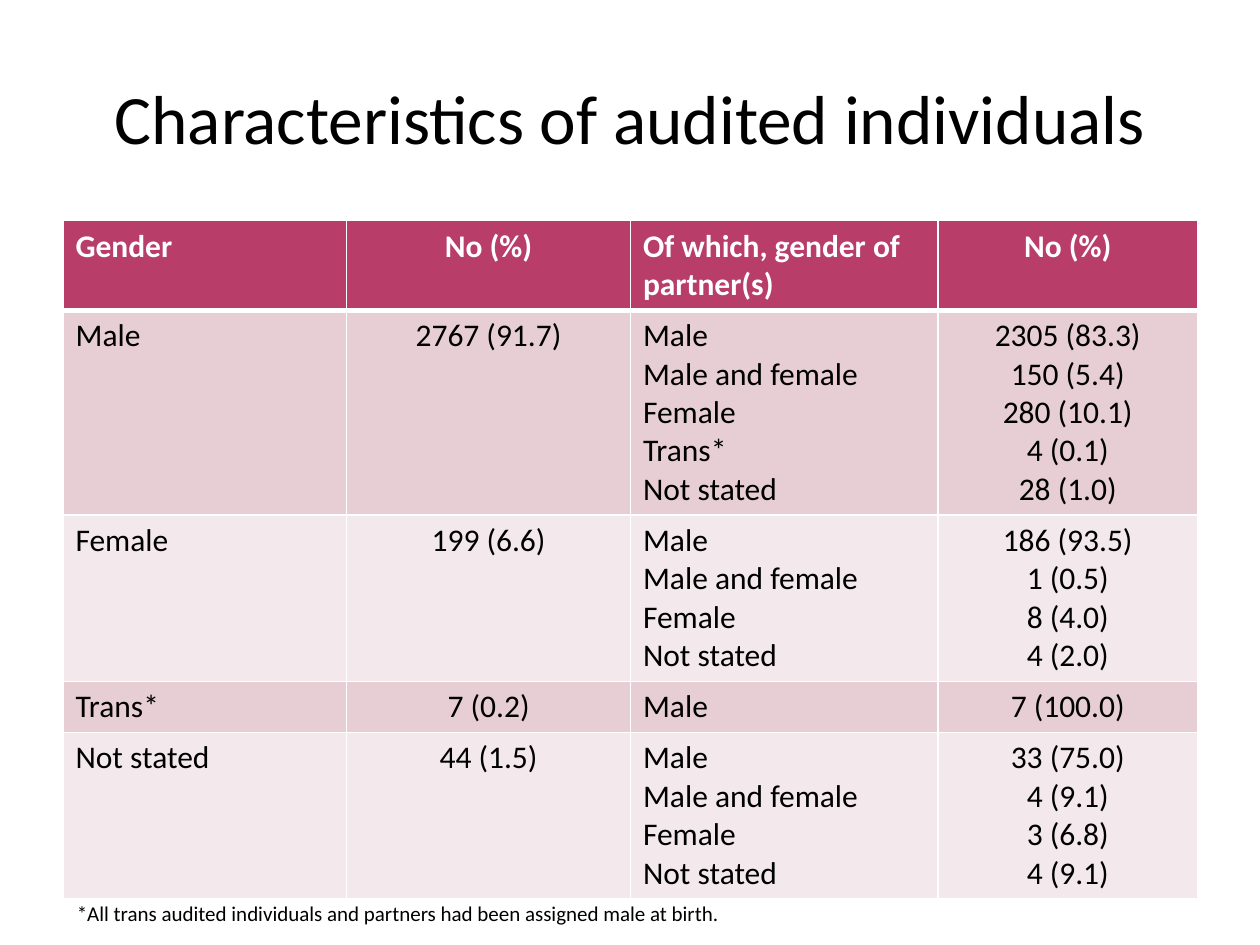
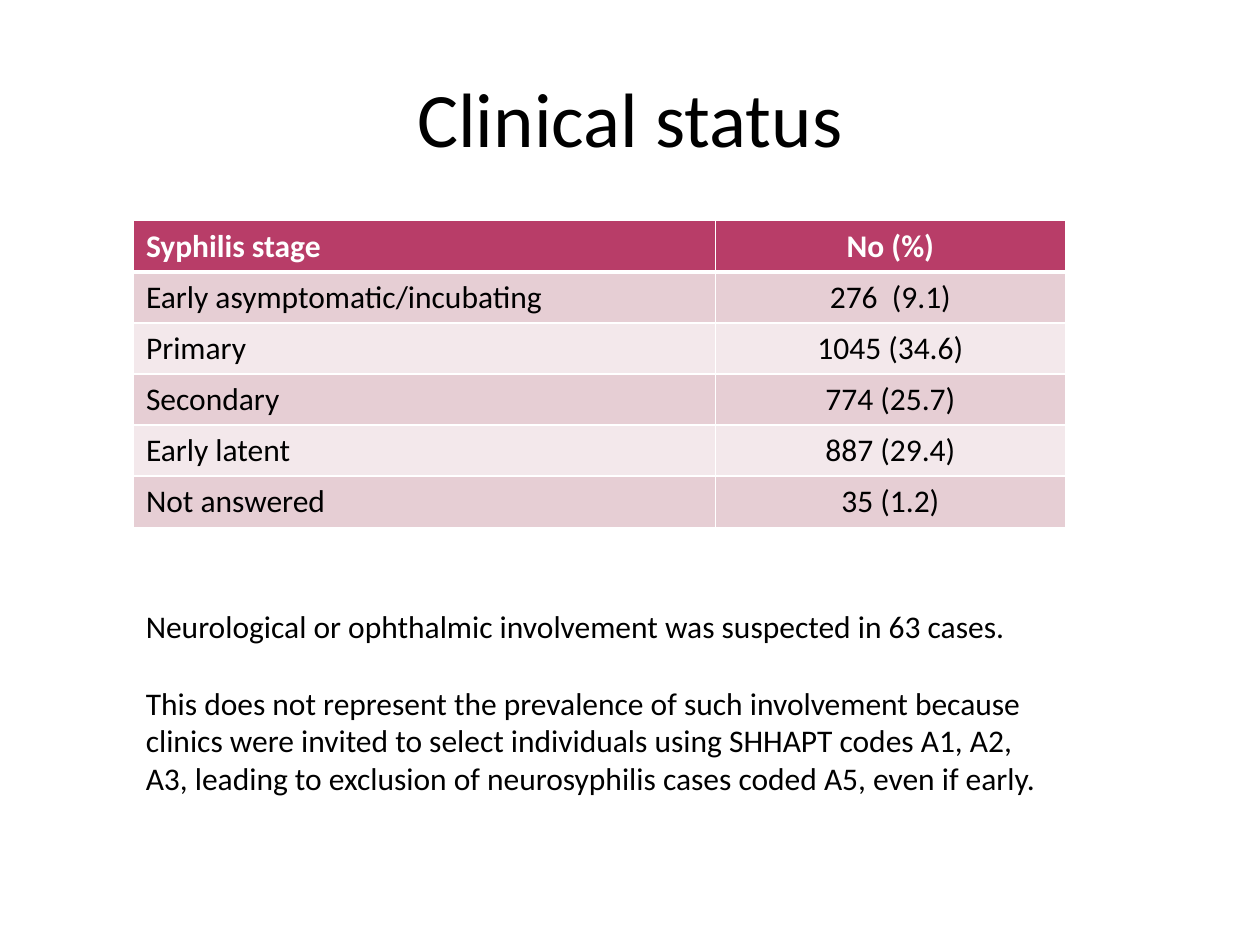
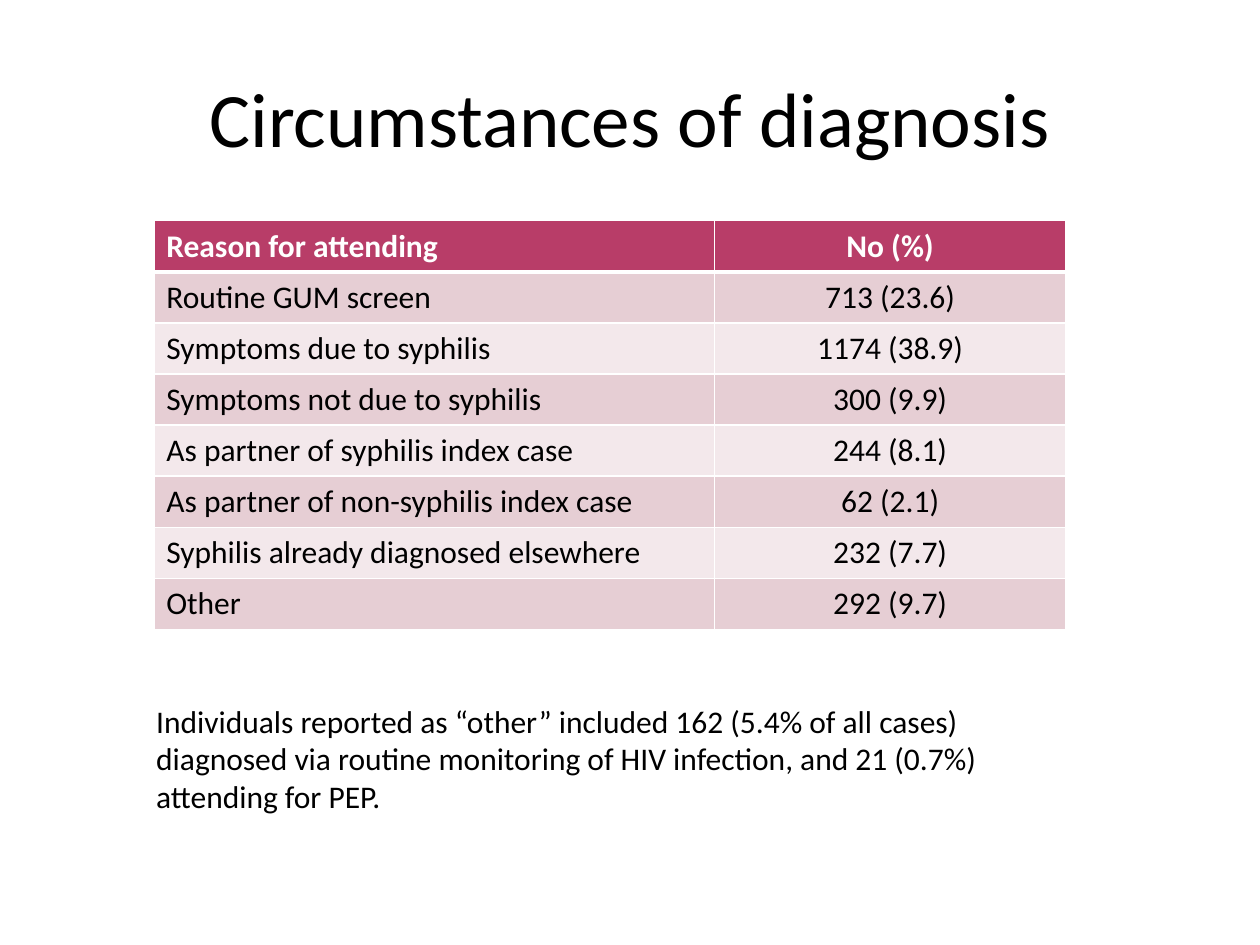
import pptx
import pptx.dml.color
import pptx.enum.text
import pptx.oxml
import pptx.oxml.ns
import pptx.util

Cm = pptx.util.Cm
RGBColor = pptx.dml.color.RGBColor
Align = pptx.enum.text.PP_ALIGN
AutoSize = pptx.enum.text.MSO_AUTO_SIZE

# Shared style
FONT = "Calibri"
BLACK = RGBColor(0x00, 0x00, 0x00)
WHITE = RGBColor(0xFF, 0xFF, 0xFF)
HEADER_FILL = RGBColor(0xB8, 0x3D, 0x68)
BAND_FILLS = (RGBColor(0xE6, 0xCE, 0xD4), RGBColor(0xF3, 0xE8, 0xEB))
TABLE_TOP = 4.45
CELL_PADDING = 0.26
LINE_HEIGHT = 0.77


def write_text(frame, text, size=18, color=BLACK, bold=False,
               align=Align.LEFT, gap=0):
    """Fill a text frame with one paragraph per line of text."""
    for index, line in enumerate(text.split("\n")):
        para = frame.paragraphs[0] if index == 0 else frame.add_paragraph()
        para.alignment = align
        para.space_before = pptx.util.Pt(gap if index else 0)
        span = para.add_run()
        span.text = line
        span.font.name = FONT
        span.font.size = pptx.util.Pt(size)
        span.font.bold = bold
        span.font.color.rgb = color


def draw_borders(cell, **widths):
    """Give a cell white borders, with widths in points by side."""
    properties = cell._tc.get_or_add_tcPr()
    for side in "LRTB":
        width = pptx.util.Pt(widths.get(side, 1))
        properties.append(pptx.oxml.parse_xml(
            f'<a:ln{side} {pptx.oxml.ns.nsdecls("a")} w="{width}">'
            f'<a:solidFill><a:srgbClr val="{WHITE}"/></a:solidFill>'
            f'</a:ln{side}>'))


class AuditDeck:
    def __init__(self):
        self.deck = pptx.Presentation()
        self.deck.slide_width = Cm(25.4)
        self.deck.slide_height = Cm(19.05)
        self.page = None

    def add_page(self, title, size=44):
        self.page = self.deck.slides.add_slide(self.deck.slide_layouts[5])
        box = self.page.shapes.title
        box.left, box.top = Cm(1.27), Cm(0.76)
        box.width, box.height = Cm(22.86), Cm(3.18)
        frame = box.text_frame
        frame.auto_size = AutoSize.NONE
        frame.vertical_anchor = pptx.enum.text.MSO_ANCHOR.MIDDLE
        write_text(frame, title, size=size, align=Align.CENTER)

    def add_count_table(self, left, widths, rows, header_lines=1):
        """Add a banded table whose every second column is centred."""
        lines = [header_lines] + [max(text.count("\n") + 1 for text in row)
                                  for row in rows[1:]]
        heights = [CELL_PADDING + LINE_HEIGHT * count for count in lines]
        table = self.page.shapes.add_table(
            len(rows), len(widths), Cm(left), Cm(TABLE_TOP),
            Cm(sum(widths)), Cm(sum(heights))).table
        for column, width in zip(table.columns, widths):
            column.width = Cm(width)
        for row, height in zip(table.rows, heights):
            row.height = Cm(height)
        for row_index, row in enumerate(rows):
            header = row_index == 0
            for column_index, text in enumerate(row):
                cell = table.cell(row_index, column_index)
                draw_borders(cell, B=3 if header else 1,
                             T=3 if row_index == 1 else 1)
                cell.fill.solid()
                cell.fill.fore_color.rgb = (
                    HEADER_FILL if header else BAND_FILLS[(row_index - 1) % 2])
                write_text(cell.text_frame, text, bold=header,
                           color=WHITE if header else BLACK,
                           align=Align.CENTER if column_index % 2 else Align.LEFT)

    def add_note(self, left, top, width, height, text, **text_format):
        box = self.page.shapes.add_textbox(
            Cm(left), Cm(top), Cm(width), Cm(height))
        box.text_frame.word_wrap = True
        box.text_frame.auto_size = AutoSize.SHAPE_TO_FIT_TEXT
        write_text(box.text_frame, text, **text_format)


def main():
    audit = AuditDeck()

    # Characteristics
    audit.add_page("Characteristics of audited individuals", size=39.6)
    partners = "Male\nMale and female\nFemale\nNot stated"
    audit.add_count_table(1.27, (5.72, 5.72, 6.2, 5.23), (
        ("Gender", "No (%)", "Of which, gender of partner(s)", "No (%)"),
        ("Male", "2767 (91.7)",
         "Male\nMale and female\nFemale\nTrans*\nNot stated",
         "2305 (83.3)\n150 (5.4)\n280 (10.1)\n4 (0.1)\n28 (1.0)"),
        ("Female", "199 (6.6)", partners,
         "186 (93.5)\n1 (0.5)\n8 (4.0)\n4 (2.0)"),
        ("Trans*", "7 (0.2)", "Male", "7 (100.0)"),
        ("Not stated", "44 (1.5)", partners,
         "33 (75.0)\n4 (9.1)\n3 (6.8)\n4 (9.1)"),
    ), header_lines=2)
    audit.add_note(
        1.3, 18.03, 22.2, 0.76,
        "*All trans audited individuals and partners had been assigned "
        "male at birth.", size=12)

    # Clinical status
    audit.add_page("Clinical status")
    audit.add_count_table(2.69, (11.73, 7.06), (
        ("Syphilis stage", "No (%)"),
        ("Early asymptomatic/incubating", "276  (9.1)"),
        ("Primary", "1045 (34.6)"),
        ("Secondary", "774 (25.7)"),
        ("Early latent", "887 (29.4)"),
        ("Not answered", "35 (1.2)"),
    ))
    audit.add_note(
        2.69, 12.12, 18.8, 4.11,
        "Neurological or ophthalmic involvement was suspected in 63 cases.\n"
        "This does not represent the prevalence of such involvement because "
        "clinics were invited to select individuals using SHHAPT codes A1, "
        "A2, A3, leading to exclusion of neurosyphilis cases coded A5, even "
        "if early.", gap=22)

    # Circumstances
    audit.add_page("Circumstances of diagnosis")
    audit.add_count_table(3.1, (11.3, 7.09), (
        ("Reason for attending", "No (%)"),
        ("Routine GUM screen", "713 (23.6)"),
        ("Symptoms due to syphilis", "1174 (38.9)"),
        ("Symptoms not due to syphilis", "300 (9.9)"),
        ("As partner of syphilis index case", "244 (8.1)"),
        ("As partner of non-syphilis index case", "62 (2.1)"),
        ("Syphilis already diagnosed elsewhere", "232 (7.7)"),
        ("Other", "292 (9.7)"),
    ))
    audit.add_note(
        2.9, 14.02, 18.42, 2.57,
        "Individuals reported as “other” included 162 (5.4% of all cases) "
        "diagnosed via routine monitoring of HIV infection, and 21 (0.7%) "
        "attending for PEP.")

    audit.deck.save("out.pptx")


if __name__ == "__main__":
    main()
